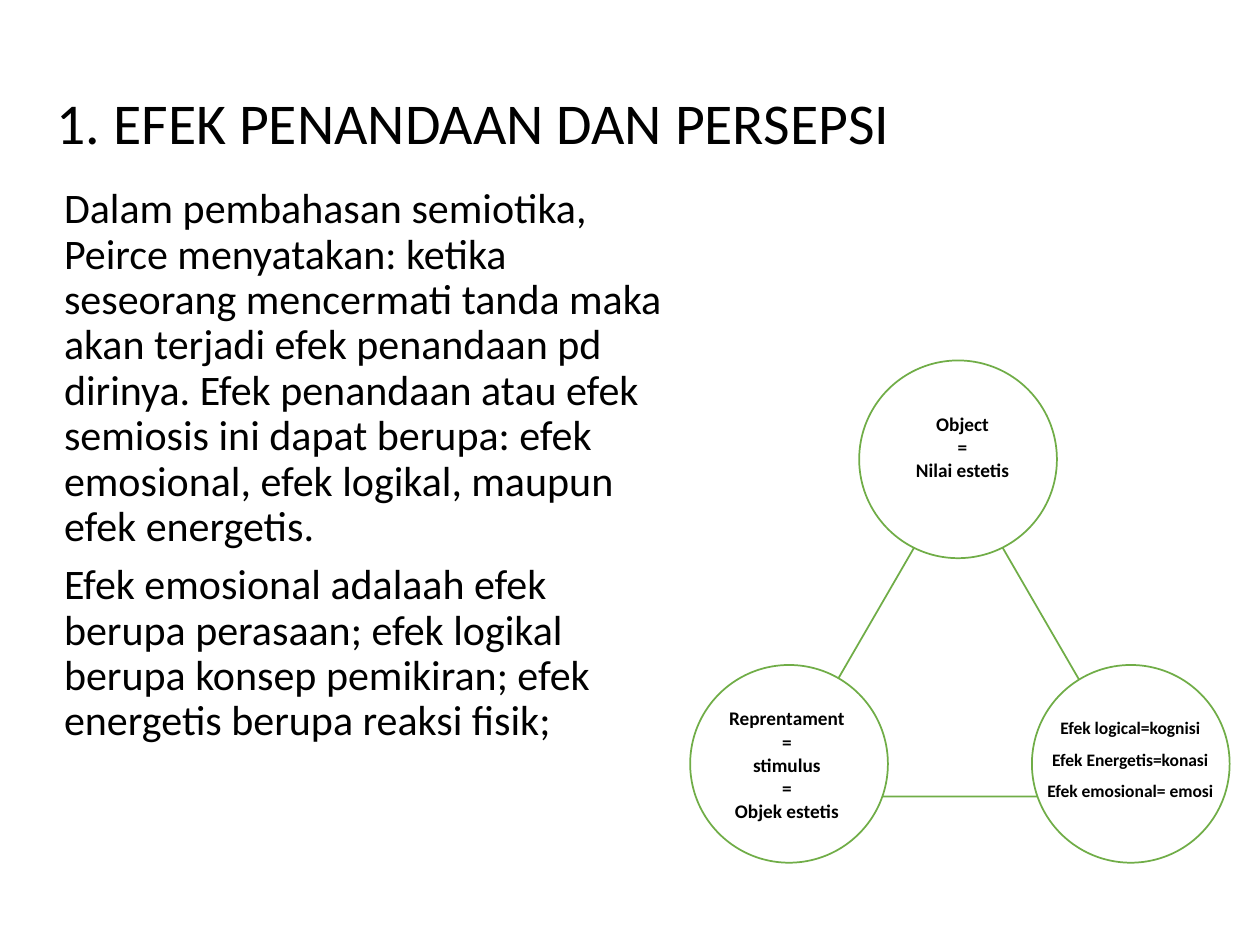
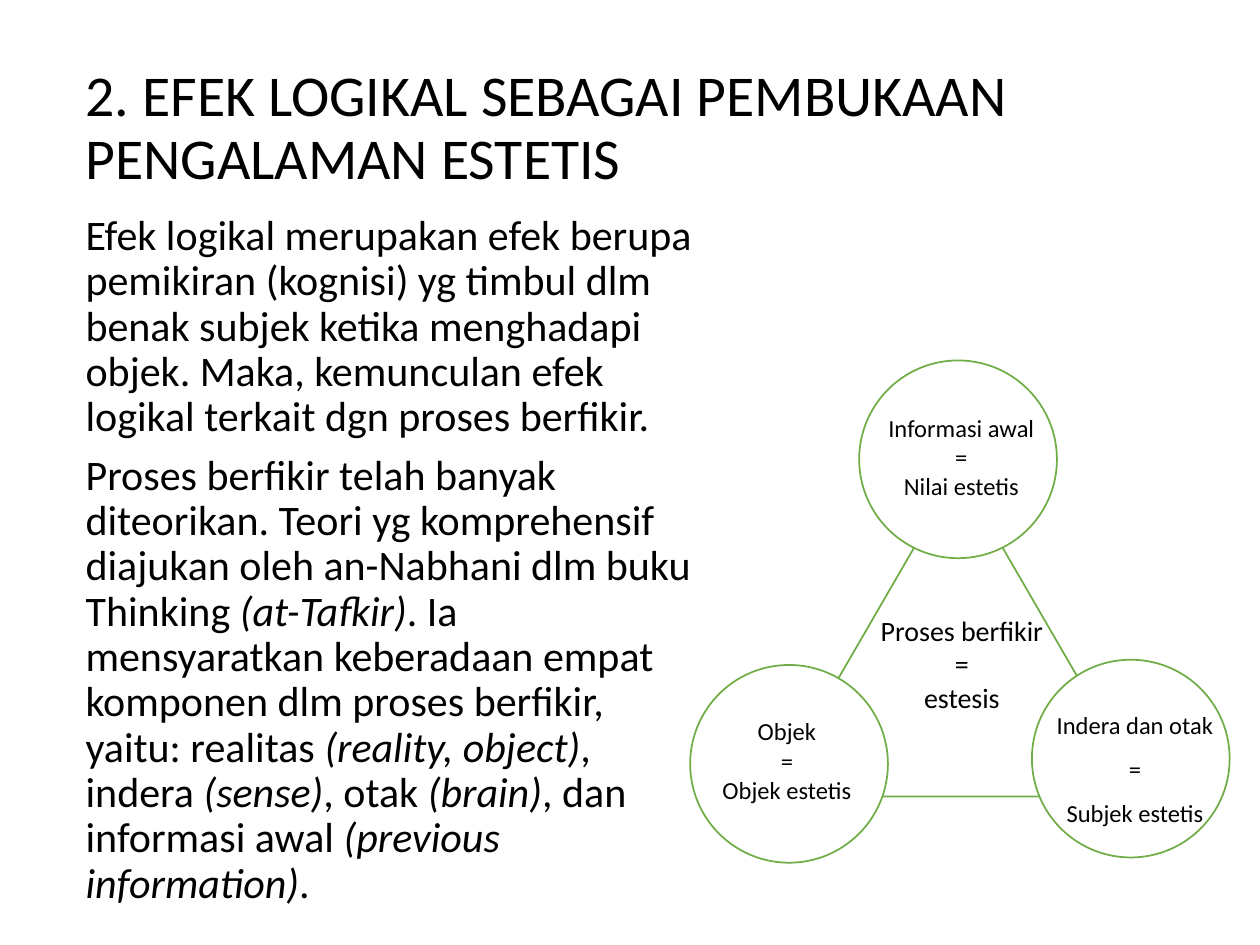
"""Builds two slides on semiotic effects, each with body text and a triangle diagram."""
from pptx import Presentation
from pptx.dml.color import RGBColor
from pptx.enum.shapes import MSO_SHAPE
from pptx.enum.text import MSO_ANCHOR, PP_ALIGN
from pptx.util import Pt

TRIANGLE, ELLIPSE = MSO_SHAPE.ISOSCELES_TRIANGLE, MSO_SHAPE.OVAL
TOP, MIDDLE = MSO_ANCHOR.TOP, MSO_ANCHOR.MIDDLE
LEFT, CENTER = PP_ALIGN.LEFT, PP_ALIGN.CENTER

FONT = "Calibri"
BLACK, WHITE, GREEN = "000000", "FFFFFF", "70AD47"
BLANK_LAYOUT = 6
TITLE_SIZE, BODY_SIZE = 33, 24
CIRCLE_SIZE = 113
TRIANGLE_PLACE = (440, 269.3, 215.3, 185.8)
TOP_CIRCLE, LEFT_CIRCLE = (491, 206), (394.4, 380)
RIGHT_CIRCLE_LEFT = 589.7


def color(value):
    return RGBColor.from_string(value)


class SlideWriter:
    """Holds the shared style and the current slide."""

    def __init__(self, deck):
        self.deck = deck
        self.slide = None

    def add_slide(self):
        self.slide = self.deck.slides.add_slide(self.deck.slide_layouts[BLANK_LAYOUT])

    def add_text(self, place, paragraphs, size, bold=False, align=LEFT, anchor=TOP,
                 spacing=1.0, gap=0, wrap=True):
        """Each paragraph is a list of spans; every second span is italic."""
        box = self.slide.shapes.add_textbox(*map(Pt, place))
        frame = box.text_frame
        frame.word_wrap = wrap
        frame.vertical_anchor = anchor
        for index, spans in enumerate(paragraphs):
            paragraph = frame.add_paragraph() if index else frame.paragraphs[0]
            paragraph.alignment = align
            paragraph.line_spacing = spacing
            paragraph.space_before = Pt(gap)
            font = paragraph.font
            font.name, font.size, font.bold = FONT, Pt(size), bold
            font.color.rgb = color(BLACK)
            for position, text in enumerate(spans):
                span = paragraph.add_run()
                span.text = text
                if position % 2:
                    span.font.italic = True

    def add_title(self, place, text):
        self.add_text(place, [[text]], TITLE_SIZE, anchor=MIDDLE, spacing=0.9)

    def add_body(self, place, paragraphs):
        self.add_text(place, paragraphs, BODY_SIZE, spacing=0.9, gap=7.5)

    def add_label(self, place, lines, size, **style):
        self.add_text(place, [[line] for line in lines], size, align=CENTER, **style)

    def add_outline(self, kind, place):
        shape = self.slide.shapes.add_shape(kind, *map(Pt, place))
        shape.shadow.inherit = False
        shape.fill.solid()
        shape.fill.fore_color.rgb = color(WHITE)
        shape.line.color.rgb = color(GREEN)
        shape.line.width = Pt(1)

    def add_diagram(self, right_circle_top):
        self.add_outline(TRIANGLE, TRIANGLE_PLACE)
        for corner in (TOP_CIRCLE, LEFT_CIRCLE, (RIGHT_CIRCLE_LEFT, right_circle_top)):
            self.add_outline(ELLIPSE, (*corner, CIRCLE_SIZE, CIRCLE_SIZE))


def add_perception_slide(writer):
    writer.add_slide()
    writer.add_title((25.2, 19.8, 620.6, 104.4), "1. EFEK PENANDAAN DAN PERSEPSI")
    writer.add_body((29.5, 103.7, 362, 416.2), [
        ["Dalam pembahasan semiotika, Peirce menyatakan: ketika seseorang mencermati tanda "
         "maka akan terjadi efek penandaan pd dirinya. Efek penandaan atau efek semiosis ini "
         "dapat berupa: efek emosional, efek logikal, maupun efek energetis."],
        ["Efek emosional adalaah efek berupa perasaan; efek logikal berupa konsep pemikiran; "
         "efek energetis berupa reaksi fisik;"],
    ])
    writer.add_diagram(right_circle_top=380)
    writer.add_label((515.5, 231.8, 69.1, 60.5), ["Object", "=", "Nilai estetis"], 11, bold=True)
    writer.add_label((392.4, 400.3, 114.5, 87.1),
                     ["Reprentament", "=", "stimulus", "=", "Objek estetis"], 11, bold=True)
    writer.add_label((590.4, 400.3, 110.9, 79.9),
                     ["Efek logical=kognisi", "Efek Energetis=konasi", "Efek emosional= emosi"],
                     10, bold=True, spacing=1.5, wrap=False)


def add_logic_slide(writer):
    writer.add_slide()
    writer.add_title((41.8, 28.8, 560.2, 90),
                     "2. EFEK LOGIKAL SEBAGAI PEMBUKAAN PENGALAMAN ESTETIS")
    writer.add_body((41.8, 118.8, 364, 405.4), [
        ["Efek logikal merupakan efek berupa pemikiran (kognisi) yg timbul dlm benak subjek "
         "ketika menghadapi objek. Maka, kemunculan efek logikal terkait dgn proses berfikir."],
        ["Proses berfikir telah banyak diteorikan. Teori yg komprehensif diajukan oleh "
         "an-Nabhani dlm buku Thinking ", "(at-Tafkir)",
         ". Ia mensyaratkan keberadaan empat komponen dlm proses berfikir, yaitu: realitas ",
         "(reality, object)", ", indera ", "(sense)", ", otak ", "(brain)",
         ", dan informasi awal ", "(previous information)", "."],
    ])
    writer.add_diagram(right_circle_top=377)
    writer.add_label((493.9, 232.2, 110.9, 58.3), ["Informasi awal", "=", "Nilai estetis"], 14)
    writer.add_label((392.4, 405.7, 114.5, 58.3), ["Objek", "=", "Objek estetis"], 14)
    writer.add_label((596, 393.8, 105.1, 83.5), ["Indera dan otak", "=", "Subjek estetis"], 14,
                     spacing=1.5, wrap=False)
    writer.add_label((494.6, 347, 110.2, 65.5), ["Proses berfikir", "=", "estesis"], 16)


def main():
    deck = Presentation()
    deck.slide_width, deck.slide_height = Pt(720), Pt(540)
    writer = SlideWriter(deck)
    add_perception_slide(writer)
    add_logic_slide(writer)
    deck.save("out.pptx")


if __name__ == "__main__":
    main()
